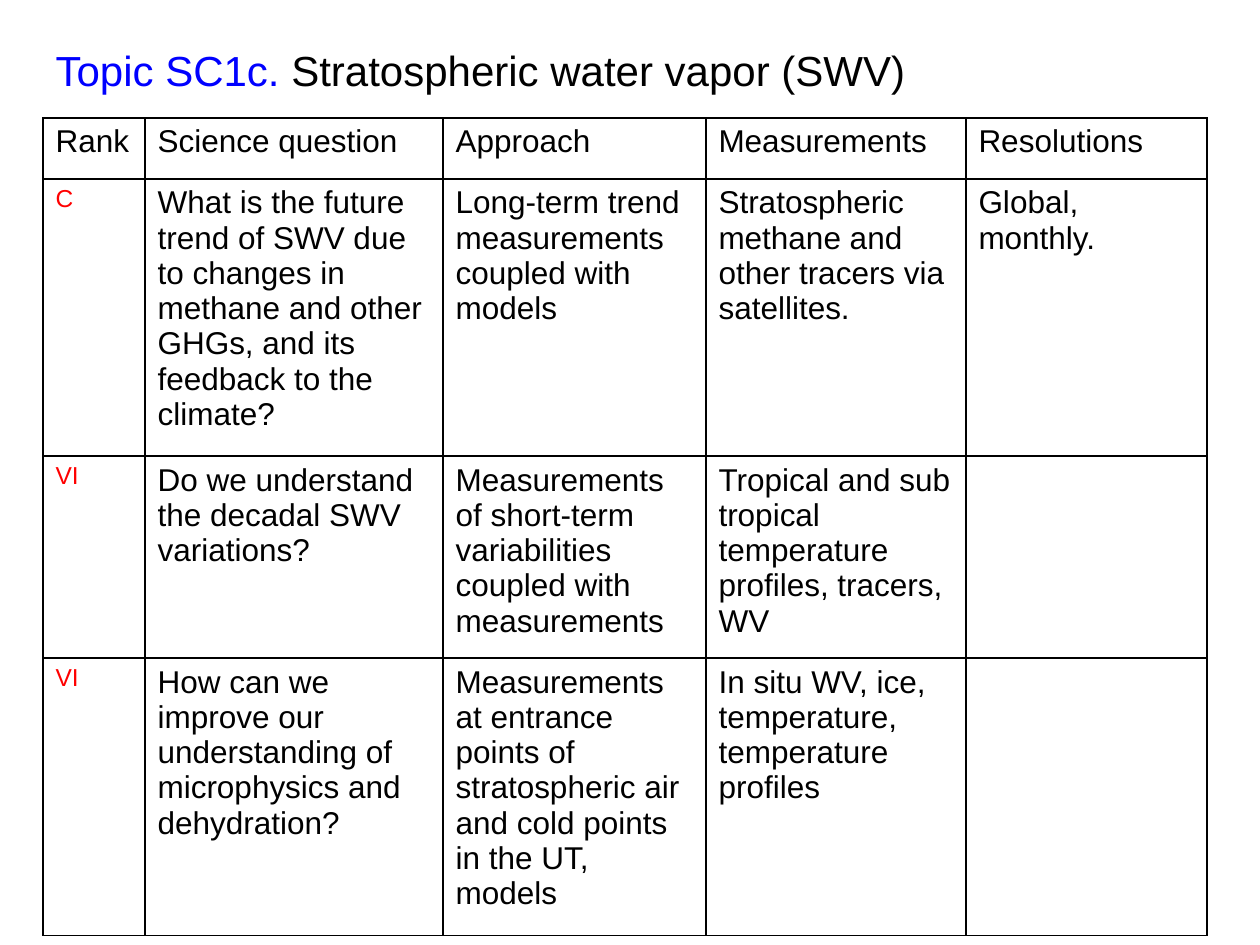
import pptx
import pptx.dml.color
import pptx.enum.text
import pptx.oxml
import pptx.oxml.ns
import pptx.util

BLACK = pptx.dml.color.RGBColor(0, 0, 0)
BLUE = pptx.dml.color.RGBColor(0, 0, 255)
RED = pptx.dml.color.RGBColor(255, 0, 0)
FONT = "Arial"
SCALE = 914400 // 126

TITLE = [("Topic SC1c.", BLUE), (" Stratospheric water vapor (SWV)", BLACK)]
HEADERS = ["Rank", "Science question", "Approach", "Measurements", "Resolutions"]
QUESTIONS = [
    ("C",
     "What is the future trend of SWV due to changes in methane and other GHGs, "
     "and its feedback to the climate?",
     "Long-term trend measurements coupled with models",
     "Stratospheric methane and other tracers via satellites.",
     "Global, monthly."),
    ("VI",
     "Do we understand the decadal SWV variations?",
     "Measurements of short-term variabilities coupled with measurements",
     "Tropical and sub tropical temperature profiles, tracers, WV",
     ""),
    ("VI",
     "How can we improve our understanding of microphysics and dehydration?",
     "Measurements at entrance points of stratospheric air and cold points in the UT, models",
     "In situ WV, ice, temperature, temperature profiles",
     ""),
]
COLUMN_WIDTHS = [102, 298, 263, 260, 241]
ROW_HEIGHTS = [61, 277, 202, 277]
TITLE_BOX = (43, 38, 878, 63)
TABLE_LEFT, TABLE_TOP = 43, 118


def px(length):
    return pptx.util.Emu(length * SCALE)


def add_text(para, text, size=18, color=BLACK):
    para.font.size = pptx.util.Pt(size)
    para.font.name = FONT
    if text:
        span = para.add_run()
        span.text = text
        span.font.size = pptx.util.Pt(size)
        span.font.name = FONT
        span.font.color.rgb = color


def add_borders(cell):
    properties = cell._tc.get_or_add_tcPr()
    for side in ("lnL", "lnR", "lnT", "lnB"):
        properties.append(pptx.oxml.parse_xml(
            f'<a:{side} {pptx.oxml.ns.nsdecls("a")} w="12700">'
            f'<a:solidFill><a:srgbClr val="{BLACK}"/></a:solidFill></a:{side}>'))


def add_title(page):
    box = page.shapes.title
    box.left, box.top, box.width, box.height = map(px, TITLE_BOX)
    frame = box.text_frame
    frame.word_wrap = False
    frame.auto_size = pptx.enum.text.MSO_AUTO_SIZE.SHAPE_TO_FIT_TEXT
    frame.vertical_anchor = pptx.enum.text.MSO_ANCHOR.TOP
    para = frame.paragraphs[0]
    para.alignment = pptx.enum.text.PP_ALIGN.LEFT
    for text, color in TITLE:
        add_text(para, text, size=24, color=color)


def add_question_table(page):
    rows = [HEADERS, *QUESTIONS]
    table = page.shapes.add_table(
        len(rows), len(HEADERS), px(TABLE_LEFT), px(TABLE_TOP),
        px(sum(COLUMN_WIDTHS)), px(sum(ROW_HEIGHTS))).table
    table.horz_banding = False
    table.first_row = False
    for column, width in zip(table.columns, COLUMN_WIDTHS):
        column.width = px(width)
    for row, height in zip(table.rows, ROW_HEIGHTS):
        row.height = px(height)
    for row_index, texts in enumerate(rows):
        for column_index, text in enumerate(texts):
            cell = table.cell(row_index, column_index)
            add_borders(cell)
            cell.fill.background()
            is_rank = row_index > 0 and column_index == 0
            add_text(cell.text_frame.paragraphs[0], text,
                     size=14 if is_rank else 18, color=RED if is_rank else BLACK)


def main():
    deck = pptx.Presentation()
    deck.slide_width = px(1260)
    deck.slide_height = px(945)
    page = deck.slides.add_slide(deck.slide_layouts.get_by_name("Title Only"))
    add_title(page)
    add_question_table(page)
    deck.save("out.pptx")


if __name__ == "__main__":
    main()
